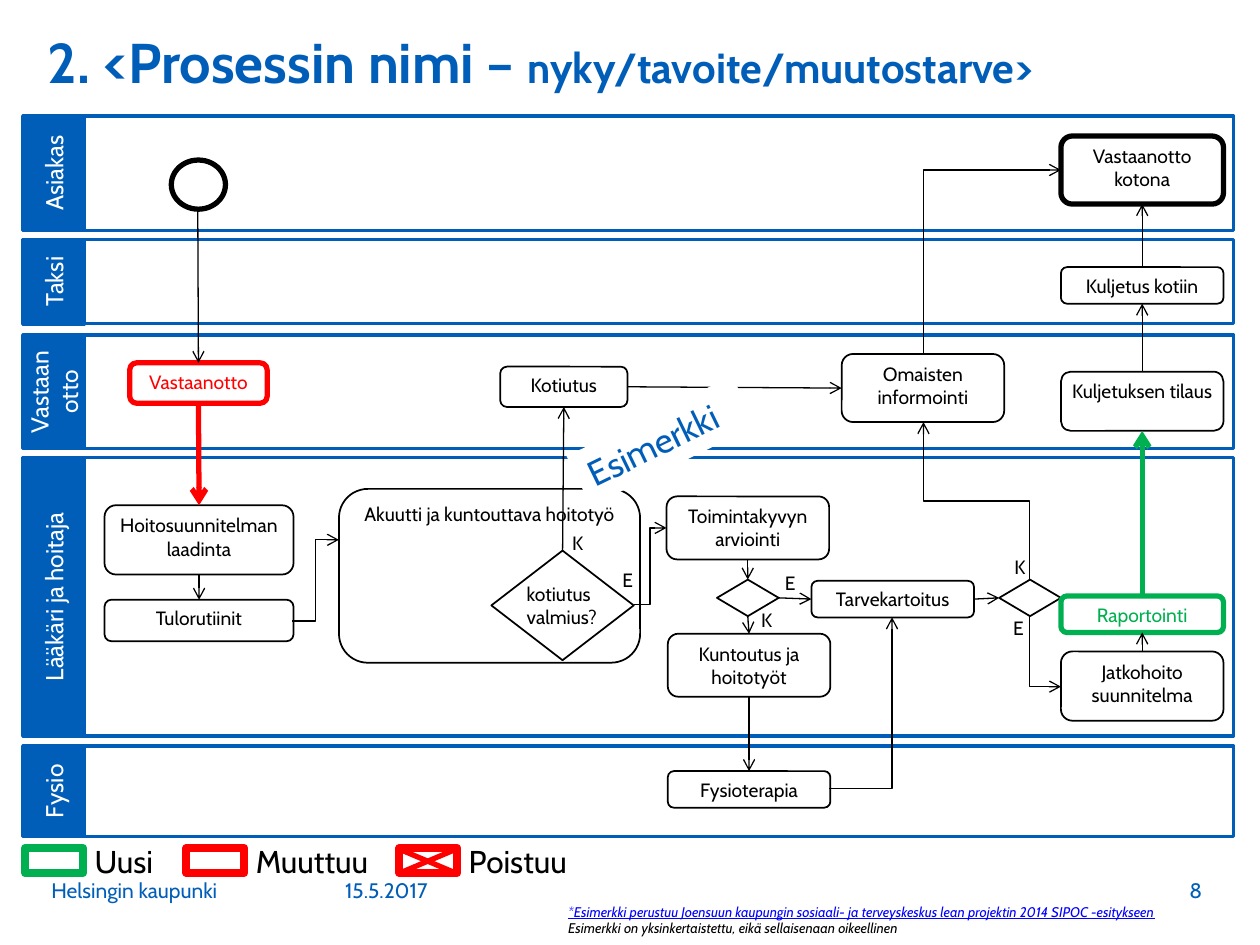
from pptx import Presentation
from pptx.dml.color import RGBColor
from pptx.enum.shapes import MSO_CONNECTOR as Conn, MSO_SHAPE as Geo
from pptx.enum.text import MSO_ANCHOR as Anchor, MSO_AUTO_SIZE as Fit, PP_ALIGN as Align
from pptx.oxml.ns import qn
from pptx.util import Emu, Pt
from lxml.etree import SubElement as Sub

SCALE = 9144  # EMU per px, 100 px to the inch
BLUE, RED, GREEN = "005EB8", "FF0000", "00B050"
BLACK, WHITE = "000000", "FFFFFF"
TOP, LEFT, BOTTOM, RIGHT = range(4)


def px(*nums):
    return [Emu(round(n * SCALE)) for n in nums]


def rgb(code):
    return RGBColor.from_string(code)


def put(shape, text, size=11, color=BLACK, align=Align.LEFT, anchor=Anchor.TOP,
        inset=4, wrap=True, grow=False, **font):
    """Write text into a shape, one paragraph per line."""
    frame = shape.text_frame
    frame.word_wrap = wrap
    frame.auto_size = Fit.SHAPE_TO_FIT_TEXT if grow else Fit.NONE
    frame.vertical_anchor = anchor
    side, edge = inset if isinstance(inset, tuple) else (inset, inset)
    frame.margin_left = frame.margin_right = px(side)[0]
    frame.margin_top = frame.margin_bottom = px(edge)[0]
    frame.text = text
    for para in frame.paragraphs:
        para.alignment = align
        for run in para.runs:
            style(run, size, color, **font)
    return shape


def style(run, size, color, **font):
    run.font.name, run.font.size = "Cabin", Pt(size)
    run.font.color.rgb = rgb(color)
    for key, val in font.items():
        setattr(run.font, key, val)


def label(slide, box, text, **fmt):
    return put(slide.shapes.add_textbox(*px(*box)), text, **fmt)


def block(slide, box, geo=Geo.ROUNDED_RECTANGLE, line=BLACK, width=1, fill=WHITE):
    shape = slide.shapes.add_shape(geo, *px(*box))
    shape.shadow.inherit = False
    shape.fill.solid()
    shape.fill.fore_color.rgb = rgb(fill)
    shape.line.color.rgb = rgb(line)
    shape.line.width = Pt(width)
    return shape


def wire(slide, start, end, kind=Conn.STRAIGHT, color=BLACK, width=0.75, head=True):
    line = slide.shapes.add_connector(kind, *px(*start, *end))
    line.line.color.rgb = rgb(color)
    line.line.width = Pt(width)
    props = line._element.spPr
    if head:
        Sub(props.find(qn("a:ln")), qn("a:tailEnd"), type="arrow")
    Sub(props, qn("a:effectLst"))
    return line


def elbow(slide, start, end, geo="bentConnector3", upright=False):
    """Bent arrow; an upright one leaves vertically, so it is turned by 90 degrees."""
    (x1, y1), (x2, y2) = start, end
    if upright:
        mx, my, dx, dy = (x1 + x2) / 2, (y1 + y2) / 2, (x2 - x1) / 2, (y2 - y1) / 2
        start, end = (mx - dy, my + dx), (mx + dy, my - dx)
    props = wire(slide, start, end, Conn.ELBOW)._element.spPr
    props.find(qn("a:prstGeom")).set("prst", geo)
    if upright:
        props.find(qn("a:xfrm")).set("rot", "5400000")


def link(slide, one, site, two, goal, **fmt):
    line = wire(slide, (0, 0), (1, 1), **fmt)
    line.begin_connect(one, site)
    line.end_connect(two, goal)


def heading(slide, box):
    title = slide.shapes.title
    title.left, title.top, title.width, title.height = px(*box)
    put(title, "2. <Prosessin nimi – ", 32, BLUE, inset=(10, 5), bold=True)
    para = title.text_frame.paragraphs[0]
    para.line_spacing = 0.85
    run = para.add_run()
    run.text = "nyky/tavoite/muutostarve>"
    style(run, 24, BLUE, bold=True)


def lane(slide, box, name):
    left, top, wide, high = box
    tab = 49
    block(slide, (left + tab, top, wide - tab, high), Geo.RECTANGLE, BLUE, 2)
    side = block(slide, (left + (tab - high) / 2, top + (high - tab) / 2, high, tab),
                 Geo.RECTANGLE, BLUE, 2, BLUE)
    side.rotation = 270
    put(side, name, 14, WHITE, Align.CENTER, Anchor.MIDDLE, (10, 5))


def flow(slide, box):
    left, top = box[:2]

    def at(x, y):
        return left + x, top + y

    def step(text, x, y, wide, high, color=BLACK, width=1):
        shape = block(slide, (*at(x, y), wide, high), line=color, width=width)
        return put(shape, text, color=BLACK if color == BLACK else color,
                   align=Align.CENTER)

    def gate(x, y, wide=49, high=29):
        return block(slide, (*at(x, y), wide, high), Geo.FLOWCHART_DECISION)

    # Steps and gates, left to right
    block(slide, (*at(118, 35), 43, 39), Geo.OVAL, width=3)
    entry = step("Vastaanotto", 85, 196, 109, 32, RED, 3)
    plan = step("Hoitosuunnitelman laadinta", 65, 309, 150, 55)
    routine = step("Tulorutiinit", 65, 384, 150, 33)
    step("Akuutti ja kuntouttava hoitotyö", 251, 296, 239, 138)
    leave = step("Kotiutus", 379, 199, 101, 32)
    ready = gate(372, 345, 113, 87)
    label(slide, (*at(396, 366), 83, 45), "kotiutus\nvalmius?", grow=True)
    assess = step("Toimintakyvyn arviointi", 511, 302, 129, 50)
    able = gate(551, 368)
    rehab = step("Kuntoutus ja hoitotyöt", 512, 411, 129, 50)
    physio = step("Fysioterapia", 512, 520, 129, 29)
    needs = step("Tarvekartoitus", 626, 369, 129, 29)
    fork = gate(775, 368)
    inform = step("Omaisten informointi", 650, 189, 129, 54)

    # Column of steps that takes the client home
    home = step("Vastaanotto kotona", 824, 16, 129, 54, width=3)
    ride = step("Kuljetus kotiin", 824, 120, 129, 29)
    order = step("Kuljetuksen tilaus", 824, 203, 129, 47)
    report = step("Raportointi", 824, 381, 129, 29, GREEN, 3)
    care = step("Jatkohoito suunnitelma", 824, 425, 129, 55)

    # Straight arrows
    wire(slide, at(139, 75), at(139, 196)).end_connect(entry, TOP)
    link(slide, entry, BOTTOM, plan, TOP, color=RED, width=3)
    link(slide, report, TOP, order, BOTTOM, color=GREEN, width=3)
    for one, two in ((plan, routine), (assess, able), (able, rehab), (rehab, physio)):
        link(slide, one, BOTTOM, two, TOP)
    for one, two in ((ready, leave), (care, report), (order, ride), (ride, home)):
        link(slide, one, TOP, two, BOTTOM)
    for one, two in ((leave, inform), (able, needs), (needs, fork)):
        link(slide, one, RIGHT, two, LEFT)

    # Bent arrows
    elbow(slide, at(214, 401), at(251, 336.5))
    elbow(slide, at(485, 388), at(511, 327))
    elbow(slide, at(640, 534), at(690, 398), "bentConnector2")
    elbow(slide, at(799, 397), at(824, 453), "bentConnector2", True)
    elbow(slide, at(715, 189), at(824, 43), "bentConnector2", True)
    elbow(slide, at(799, 368), at(715, 243), upright=True)

    # Yes (K) and no (E) marks
    for mark, x, y in (("K", 432, 326), ("E", 472, 355), ("K", 582, 387),
                       ("E", 601, 357), ("E", 782, 393), ("K", 783, 345)):
        label(slide, (*at(x, y), 24, 27), mark, grow=True)

    # Slanted sign
    sign = label(slide, (*at(434, 236), 146, 44), "Esimerkki", size=20, color=BLUE,
                 inset=(10, 5), wrap=False, grow=True)
    sign.fill.solid()
    sign.fill.fore_color.rgb = rgb(WHITE)
    sign.rotation = 334.1


def legend(slide, box):
    left, top = box[:2]
    for name, x, wide, color in (("Uusi", 0, 51, GREEN), ("Muuttuu", 128, 101, RED),
                                 ("Poistuu", 297, 88, RED)):
        block(slide, (left + x, top + 5, 46, 20), Geo.RECTANGLE, color, 4.5)
        label(slide, (left + x + 55, top, wide, 30), name, size=18, inset=0,
              wrap=False, grow=True)
    # Cross over the last key
    a, b, low, high = left + 297, left + 342, top + 25, top + 6
    for start, end in (((a, low), (b, high)), ((b, low), (a, high))):
        wire(slide, start, end, color=RED, width=3, head=False)


def footer(slide, box):
    left, top = box[:2]
    for text, x, y, wide, high, align in (
            ("Helsingin kaupunki", 0, 0, 233, 51, Align.LEFT),
            ("15.5.2017", 233, 12, 155, 39, Align.LEFT),
            ("8", 815, 12, 118, 39, Align.RIGHT)):
        label(slide, (left + x, top + y, wide, high), text, size=12, color=BLUE,
              align=align, anchor=Anchor.BOTTOM, inset=(10, 5))
    note = dict(size=8, inset=0, wrap=False, grow=True, italic=True)
    label(slide, (left + 420, top + 47, 549, 13),
          "*Esimerkki perustuu Joensuun kaupungin sosiaali- ja terveyskeskus "
          "lean projektin 2014 SIPOC -esitykseen",
          color="0000FF", underline=True, **note)
    label(slide, (left + 420, top + 60, 310, 13),
          "Esimerkki on yksinkertaistettu, eikä sellaisenaan oikeellinen", **note)


def main():
    deck = Presentation()
    deck.slide_width, deck.slide_height = px(1000, 750)
    slide = deck.slides.add_slide(deck.slide_layouts[5])
    heading(slide, (28, 25, 922, 75))
    footer(slide, (31, 670, 933, 73))
    for name, top, high in (("Asiakas", 92, 91), ("Taksi", 190, 67),
                            ("Vastaan otto", 266, 90),
                            ("Lääkäri ja hoitaja", 363, 221), ("Fysio", 592, 72)):
        lane(slide, (18, top, 961, high), name)
    flow(slide, (18, 92, 961, 572))
    legend(slide, (20, 668, 440, 30))
    deck.save("out.pptx")


if __name__ == "__main__":
    main()
